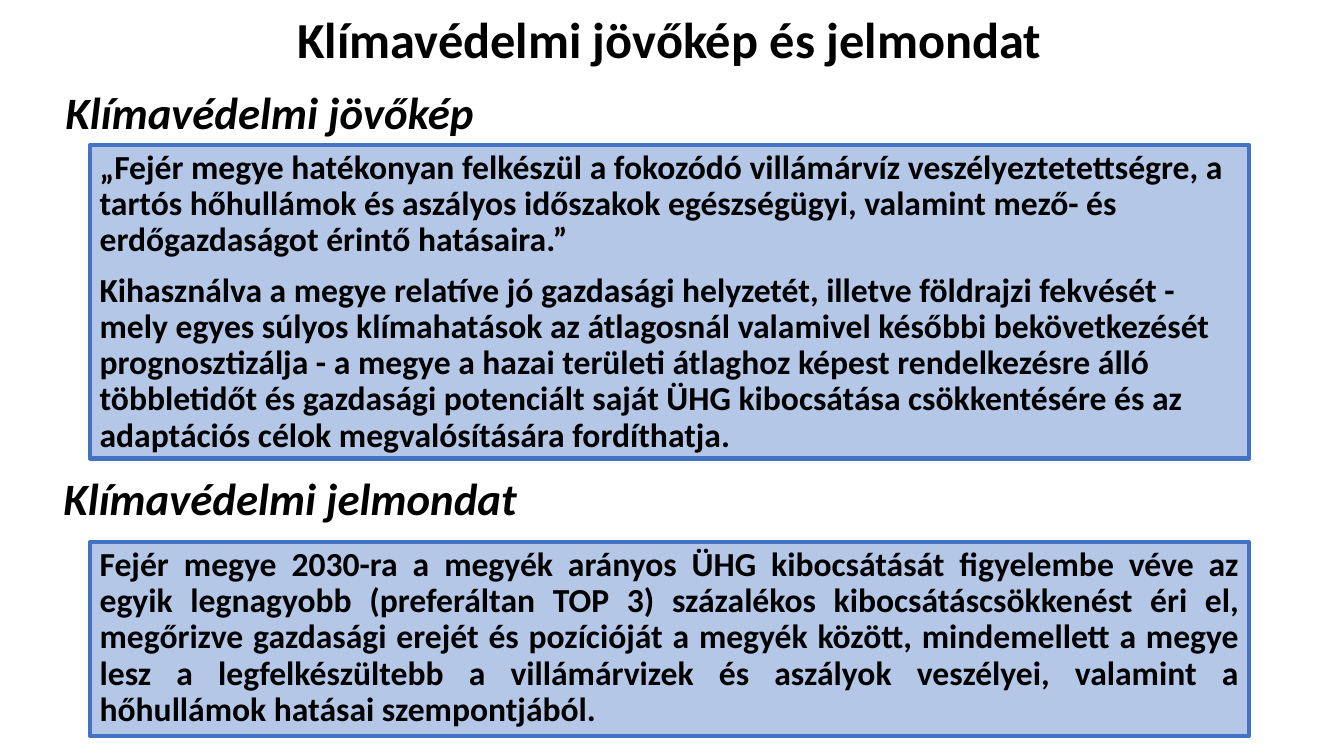
from pptx import Presentation
from pptx.dml.color import RGBColor
from pptx.enum.shapes import MSO_SHAPE
from pptx.enum.text import MSO_ANCHOR, PP_ALIGN
from pptx.util import Inches, Pt

WIDTH, HEIGHT = 13.33, 7.5
MARGIN = 0.89
CONTENT_WIDTH = 11.5
HEADING_HEIGHT = 0.58

VISION = [
    "„Fejér megye hatékonyan felkészül a fokozódó villámárvíz "
    "veszélyeztetettségre, a tartós hőhullámok és aszályos időszakok "
    "egészségügyi, valamint mező- és erdőgazdaságot érintő hatásaira.”",
    "Kihasználva a megye relatíve jó gazdasági helyzetét, illetve földrajzi "
    "fekvését - mely egyes súlyos klímahatások az átlagosnál valamivel későbbi "
    "bekövetkezését prognosztizálja - a megye a hazai területi átlaghoz képest "
    "rendelkezésre álló többletidőt és gazdasági potenciált saját ÜHG "
    "kibocsátása csökkentésére és az adaptációs célok megvalósítására "
    "fordíthatja.",
]
MOTTO = [
    "Fejér megye 2030-ra a megyék arányos ÜHG kibocsátását figyelembe véve az "
    "egyik legnagyobb (preferáltan TOP 3) százalékos kibocsátáscsökkenést éri "
    "el, megőrizve gazdasági erejét és pozícióját a megyék között, mindemellett "
    "a megye lesz a legfelkészültebb a villámárvizek és aszályok veszélyei, "
    "valamint a hőhullámok hatásai szempontjából.",
]


def color(value):
    """Turn a hex string into a colour."""
    return RGBColor.from_string(value)


def write(tf, texts, size, align, before=0, italic=False):
    """Fill a text frame with bold paragraphs of one style."""
    tf.word_wrap = True
    for i, text in enumerate(texts):
        p = tf.add_paragraph() if i else tf.paragraphs[0]
        p.text = text
        p.alignment = align
        p.line_spacing = 0.9
        p.space_before = Pt(before)
        font = p.runs[0].font
        font.name = "Calibri"
        font.size = Pt(size)
        font.bold = True
        font.italic = italic
        font.color.rgb = color("000000")


def add_heading(s, text, left, top, size, align=PP_ALIGN.LEFT, italic=True):
    """Add a one-line heading."""
    sp = s.shapes.add_textbox(Inches(left), Inches(top),
                              Inches(CONTENT_WIDTH), Inches(HEADING_HEIGHT))
    sp.text_frame.vertical_anchor = MSO_ANCHOR.MIDDLE
    write(sp.text_frame, [text], size, align, italic=italic)


def add_panel(s, texts, top, height, align):
    """Add a framed blue panel of body text."""
    sp = s.shapes.add_shape(MSO_SHAPE.RECTANGLE, Inches(MARGIN), Inches(top),
                            Inches(CONTENT_WIDTH), Inches(height))
    sp.shadow.inherit = False
    sp.fill.solid()
    sp.fill.fore_color.rgb = color("B4C7E7")
    sp.line.color.rgb = color("4472C4")
    sp.line.width = Pt(3)
    sp.text_frame.vertical_anchor = MSO_ANCHOR.TOP
    write(sp.text_frame, texts, 24, align, before=10)


def main():
    """Build the slide and save it."""
    prs = Presentation()
    prs.slide_width = Inches(WIDTH)
    prs.slide_height = Inches(HEIGHT)
    s = prs.slides.add_slide(prs.slide_layouts[6])
    add_heading(s, "Klímavédelmi jövőkép és jelmondat", MARGIN, 0.13, 36,
                PP_ALIGN.CENTER, italic=False)
    add_heading(s, "Klímavédelmi jövőkép", 0.55, 0.85, 32)
    add_panel(s, VISION, 1.44, 3.11, PP_ALIGN.LEFT)
    add_heading(s, "Klímavédelmi jelmondat", 0.53, 4.68, 32)
    add_panel(s, MOTTO, 5.38, 1.92, PP_ALIGN.JUSTIFY)
    prs.save("out.pptx")


if __name__ == "__main__":
    main()
